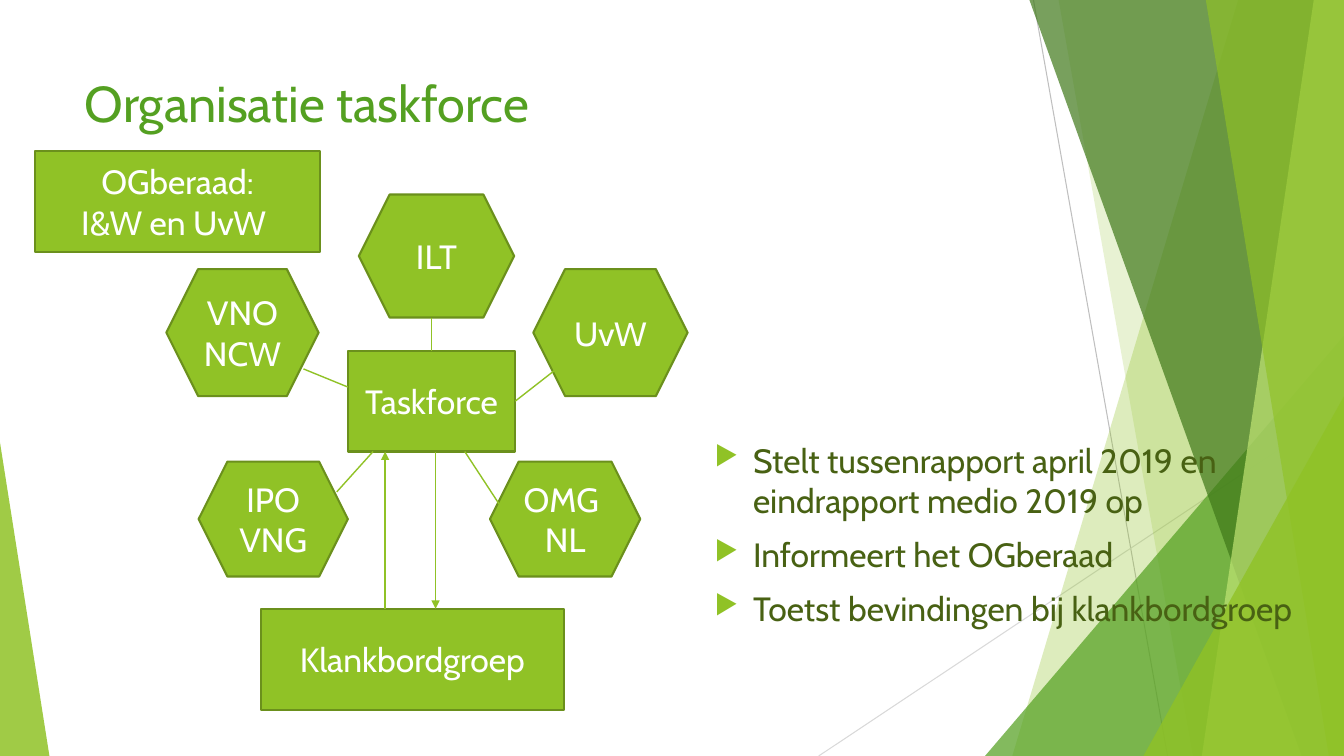
from lxml import etree
from pptx import Presentation
from pptx.dml.color import RGBColor
from pptx.enum.shapes import MSO_CONNECTOR, MSO_SHAPE
from pptx.enum.text import MSO_ANCHOR, PP_ALIGN
from pptx.oxml.ns import qn
from pptx.util import Inches, Pt

RECTANGLE = MSO_SHAPE.RECTANGLE
HEXAGON = MSO_SHAPE.HEXAGON
TRIANGLE = MSO_SHAPE.ISOSCELES_TRIANGLE
STRAIGHT = MSO_CONNECTOR.STRAIGHT
TOP, MIDDLE = MSO_ANCHOR.TOP, MSO_ANCHOR.MIDDLE
LEFT, CENTER = PP_ALIGN.LEFT, PP_ALIGN.CENTER
TOP_SIDE, RIGHT_SIDE = 0, 3

FONT = "Cabin"
LIME, GREEN, DARK_LIME = "90C226", "54A021", "6B901C"
WIDTH, HEIGHT = 13.33, 7.5

RIBBONS = [
    ([(12.28, 0), (WIDTH, 0), (WIDTH, HEIGHT), (10.04, HEIGHT)], LIME, 30),
    ([(10.5, 0), (WIDTH, 0), (WIDTH, HEIGHT), (11.83, HEIGHT)], LIME, 20),
    ((9.77, 3.33, 3.56, 4.17), GREEN, 72),
    ([(10.21, 0), (WIDTH, 0), (WIDTH, HEIGHT), (12.91, HEIGHT)], "3F7819", 70),
    ([(13.03, 0), (WIDTH, 0), (WIDTH, HEIGHT), (11.92, HEIGHT)], "C0E474", 70),
    ([(11.96, 0), (WIDTH, 0), (WIDTH, HEIGHT), (13.18, HEIGHT)], LIME, 65),
    ((11.34, 3.93, 1.99, 3.57), LIME, 80),
]
MEMBERS = [
    (["UvW"], (5.29, 2.67, 1.53, 1.26)),
    (["ILT"], (3.56, 1.93, 1.54, 1.22)),
    (["VNO", "NCW"], (1.65, 2.67, 1.51, 1.26)),
    (["IPO VNG"], (1.97, 4.58, 1.48, 1.14)),
    (["OMG ", "NL"], (4.86, 4.58, 1.49, 1.14)),
]
TASKS = [
    "Stelt tussenrapport april 2019 en eindrapport medio 2019 op",
    "Informeert het OGberaad",
    "Toetst bevindingen bij klankbordgroep",
]


def color(value):
    return RGBColor.from_string(value)


def inches(values):
    return [Inches(value) for value in values]


def add_xml(parent, tag, **attributes):
    return etree.SubElement(parent, qn(tag), attributes)


def write(frame, lines, size, hue, align, anchor):
    frame.word_wrap = True
    frame.vertical_anchor = anchor
    for index, line in enumerate(lines):
        para = frame.add_paragraph() if index else frame.paragraphs[0]
        para.alignment = align
        span = para.add_run()
        span.text = line
        span.font.name = FONT
        span.font.size = Pt(size)
        span.font.color.rgb = color(hue)


def paint(shape, hue, opacity):
    shape.shadow.inherit = False
    shape.fill.solid()
    shape.fill.fore_color.rgb = color(hue)
    shape.line.fill.background()
    tint = shape.fill._xPr.find(qn("a:solidFill"))[0]
    add_xml(tint, "a:alpha", val=str(opacity * 1000))


def add_triangle(page, place, hue, opacity, apex):
    triangle = page.shapes.add_shape(TRIANGLE, *inches(place))
    triangle.adjustments[0] = apex
    paint(triangle, hue, opacity)


def add_ribbon(page, points, hue, opacity):
    corners = [inches(point) for point in points]
    builder = page.shapes.build_freeform(*corners[0], scale=1.0)
    builder.add_line_segments(corners[1:], close=True)
    paint(builder.convert_to_shape(), hue, opacity)


def add_line(page, start, end, hue=LIME, width=1, arrow=False):
    line = page.shapes.add_connector(STRAIGHT, *inches(start + end))
    line.line.color.rgb = color(hue)
    line.line.width = Pt(width)
    if arrow:
        add_xml(line.line._get_or_add_ln(), "a:tailEnd", type="triangle")
    add_xml(line._element.spPr, "a:effectLst")
    return line


def add_box(page, kind, lines, place):
    box = page.shapes.add_shape(kind, *inches(place))
    box.shadow.inherit = False
    box.fill.solid()
    box.fill.fore_color.rgb = color(LIME)
    box.line.color.rgb = color(DARK_LIME)
    box.line.width = Pt(1.5)
    write(box.text_frame, lines, 24, "FFFFFF", CENTER, MIDDLE)
    return box


def add_background(page):
    add_line(page, (10.25, 0), (11.58, HEIGHT), "BFBFBF", 0.75)
    add_line(page, (WIDTH, 4.03), (8.12, HEIGHT), "D9D9D9", 0.75)
    for outline, hue, opacity in RIBBONS:
        if isinstance(outline, list):
            add_ribbon(page, outline, hue, opacity)
        else:
            add_triangle(page, outline, hue, opacity, 1)
    add_triangle(page, (0, 4.39, 0.49, 3.11), LIME, 85, 0)


def add_title(page, text):
    title = page.shapes.title
    title.left, title.top, title.width, title.height = inches((0.74, 0.67, 9.4, 1.44))
    write(title.text_frame, [text], 36, GREEN, LEFT, TOP)


def add_bullets(page, lines):
    box = page.shapes.add_textbox(*inches((6.99, 4.31, 6.21, 2.52)))
    write(box.text_frame, lines, 24, "486113", LEFT, TOP)
    for para in box.text_frame.paragraphs:
        para.space_before = Pt(10)
        props = para._p.get_or_add_pPr()
        props.set("marL", str(Inches(0.38)))
        props.set("indent", str(Inches(-0.38)))
        add_xml(add_xml(props, "a:buClr"), "a:srgbClr", val=LIME)
        add_xml(props, "a:buSzPct", val="80000")
        add_xml(props, "a:buChar", char="▶")


def add_organisation(page):
    taskforce = add_box(page, RECTANGLE, ["Taskforce"], (3.45, 3.48, 1.66, 1))
    for lines, place in MEMBERS:
        add_box(page, HEXAGON, lines, place)
    add_line(page, (3.01, 3.66), (3.45, 3.84))
    add_line(page, (4.28, 3.15), (4.28, 3.48)).end_connect(taskforce, TOP_SIDE)
    add_line(page, (5.52, 3.66), (5.11, 3.98)).end_connect(taskforce, RIGHT_SIDE)
    add_line(page, (4.95, 5), (4.61, 4.48))
    add_line(page, (3.34, 4.88), (3.7, 4.48))
    add_box(page, RECTANGLE, ["OGberaad:", "I&W en UvW "], (0.35, 1.5, 2.82, 1))
    add_box(page, RECTANGLE, ["Klankbordgroep"], (2.59, 6.04, 3, 1))
    add_line(page, (3.82, 6.04), (3.82, 4.48), arrow=True)
    add_line(page, (4.32, 4.48), (4.32, 6.04), arrow=True)


def main():
    deck = Presentation()
    deck.slide_width, deck.slide_height = inches((WIDTH, HEIGHT))
    page = deck.slides.add_slide(deck.slide_layouts[5])
    add_background(page)
    add_title(page, "Organisatie taskforce")
    add_bullets(page, TASKS)
    add_organisation(page)
    deck.save("out.pptx")


if __name__ == "__main__":
    main()
